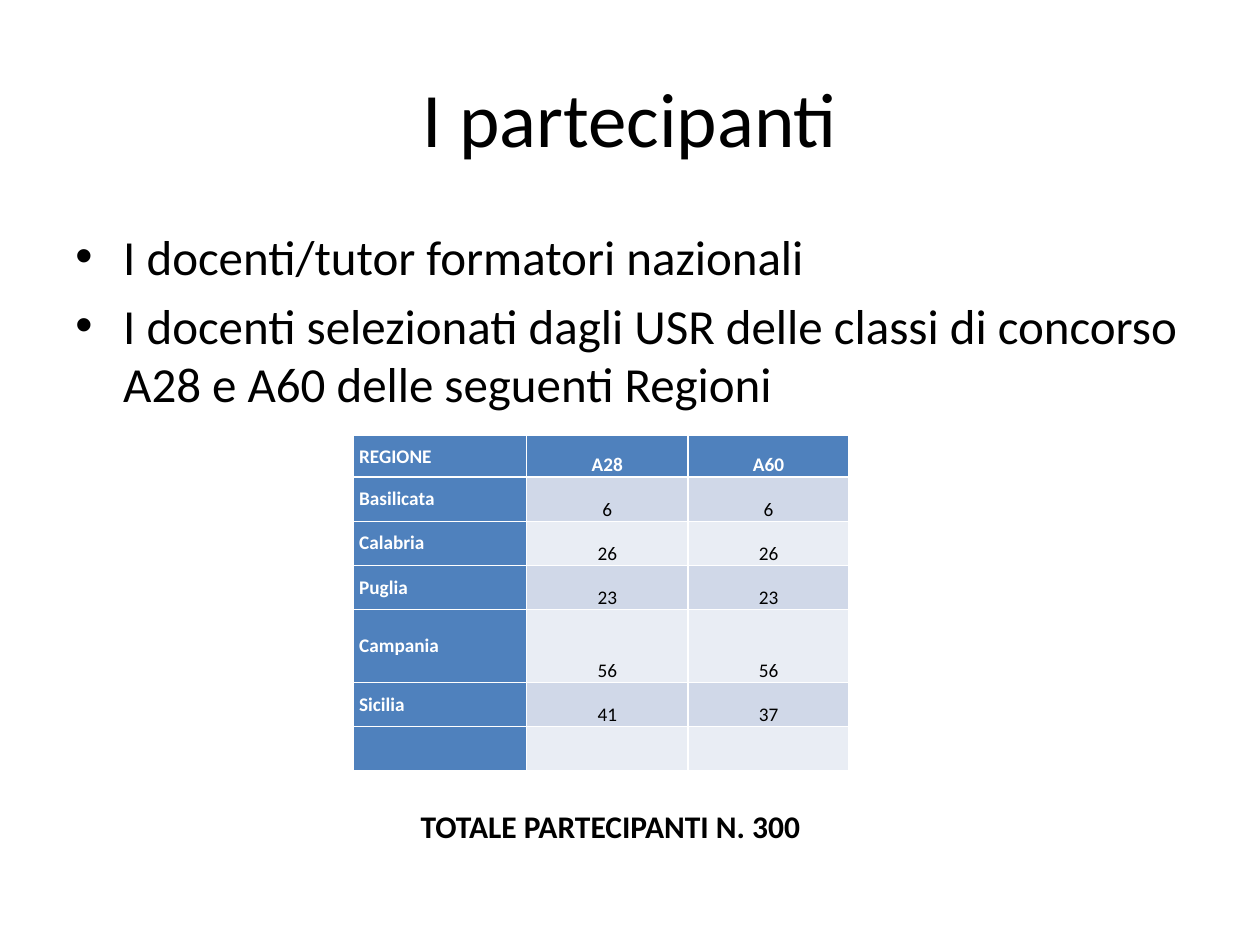
from lxml.etree import SubElement
from pptx import Presentation
from pptx.dml.color import RGBColor
from pptx.enum.text import MSO_ANCHOR as Anchor, PP_ALIGN as Align
from pptx.oxml.ns import qn
from pptx.util import Inches, Pt

BLACK = RGBColor(0x00, 0x00, 0x00)
WHITE = RGBColor(0xFF, 0xFF, 0xFF)
BLUE = RGBColor(0x4F, 0x81, 0xBD)
BANDS = (RGBColor(0xD0, 0xD8, 0xE8), RGBColor(0xE9, 0xED, 0xF4))

WIDTH, HEIGHT = Inches(10), Inches(7.5)
MARGIN, CONTENT = 0.05, 0.9
FONT = "Calibri"

TITLE = "I partecipanti"
GROUPS = (
    "I docenti/tutor formatori nazionali",
    "I docenti selezionati dagli USR delle classi di concorso A28 e A60 delle seguenti Regioni",
)
TOTAL = "TOTALE PARTECIPANTI N. 300"
REGIONS = (
    ("REGIONE", "A28", "A60"),
    ("Basilicata", "6", "6"),
    ("Calabria", "26", "26"),
    ("Puglia", "23", "23"),
    ("Campania", "56", "56"),
    ("Sicilia", "41", "37"),
    ("", "", ""),
)
COLUMN_WIDTHS = (1.38, 1.28, 1.28)
ROW_HEIGHTS = (0.33, 0.35, 0.35, 0.35, 0.58, 0.35, 0.35)


def area(left, top, width, height):
    """Turn shares of the slide's size into lengths."""
    return (int(WIDTH * left), int(HEIGHT * top), int(WIDTH * width), int(HEIGHT * height))


def add_run(paragraph, text, size, color=BLACK, bold=False):
    """Add one formatted run to a paragraph."""
    run = paragraph.add_run()
    run.text = text
    font = run.font
    font.name, font.size, font.bold = FONT, Pt(size), bold
    font.color.rgb = color


def set_title(slide):
    """Place and fill the title placeholder."""
    title = slide.shapes.title
    title.left, title.top, title.width, title.height = area(MARGIN, 0.04, CONTENT, 0.167)
    title.text_frame.vertical_anchor = Anchor.MIDDLE
    heading = title.text_frame.paragraphs[0]
    heading.alignment = Align.CENTER
    add_run(heading, TITLE, 44)


def add_text_area(slide, *shares):
    """Add a wrapping text box and return its frame."""
    frame = slide.shapes.add_textbox(*area(*shares)).text_frame
    frame.word_wrap = True
    return frame


def add_bullets(frame, items, size):
    """Write each item as a bulleted paragraph with a hanging indent."""
    for index, item in enumerate(items):
        paragraph = frame.add_paragraph() if index else frame.paragraphs[0]
        paragraph.space_before = Pt(size * 0.2)
        properties = paragraph._p.get_or_add_pPr()
        properties.set("marL", str(Inches(0.38)))
        properties.set("indent", str(-Inches(0.38)))
        SubElement(properties, qn("a:buFont")).set("typeface", "Arial")
        SubElement(properties, qn("a:buChar")).set("char", "•")
        add_run(paragraph, item, size)


def format_cell(cell, text, row, column):
    """Fill a cell as a heading or as a banded value."""
    heading = row == 0 or column == 0
    cell.fill.solid()
    cell.fill.fore_color.rgb = BLUE if heading else BANDS[(row - 1) % 2]
    cell.margin_left = cell.margin_right = Inches(0.05)
    cell.margin_top = cell.margin_bottom = 0
    cell.vertical_anchor = Anchor.BOTTOM if column else Anchor.MIDDLE
    paragraph = cell.text_frame.paragraphs[0]
    paragraph.alignment = Align.CENTER if column else Align.LEFT
    if text:
        add_run(paragraph, text, 11, WHITE if heading else BLACK, heading)


def add_regions(slide):
    """Add the table of participants by region."""
    place = area(0.28, 0.461, sum(COLUMN_WIDTHS) / 10, sum(ROW_HEIGHTS) / 7.5)
    regions = slide.shapes.add_table(len(REGIONS), len(COLUMN_WIDTHS), *place).table
    regions.first_col = True
    for column, width in zip(regions.columns, COLUMN_WIDTHS):
        column.width = Inches(width)
    for row, height in zip(regions.rows, ROW_HEIGHTS):
        row.height = Inches(height)
    for row, values in enumerate(REGIONS):
        for column, value in enumerate(values):
            format_cell(regions.cell(row, column), value, row, column)


def main():
    """Build and save the participants slide."""
    deck = Presentation()
    deck.slide_width, deck.slide_height = WIDTH, HEIGHT
    slide = deck.slides.add_slide(deck.slide_layouts[5])
    set_title(slide)
    add_bullets(add_text_area(slide, MARGIN, 0.233, CONTENT, 0.581), GROUPS, 28)
    total = add_text_area(slide, 0.209, 0.847, 0.551, 0.053).paragraphs[0]
    total.alignment = Align.CENTER
    add_run(total, TOTAL, 18, bold=True)
    add_regions(slide)
    deck.save("out.pptx")


if __name__ == "__main__":
    main()
